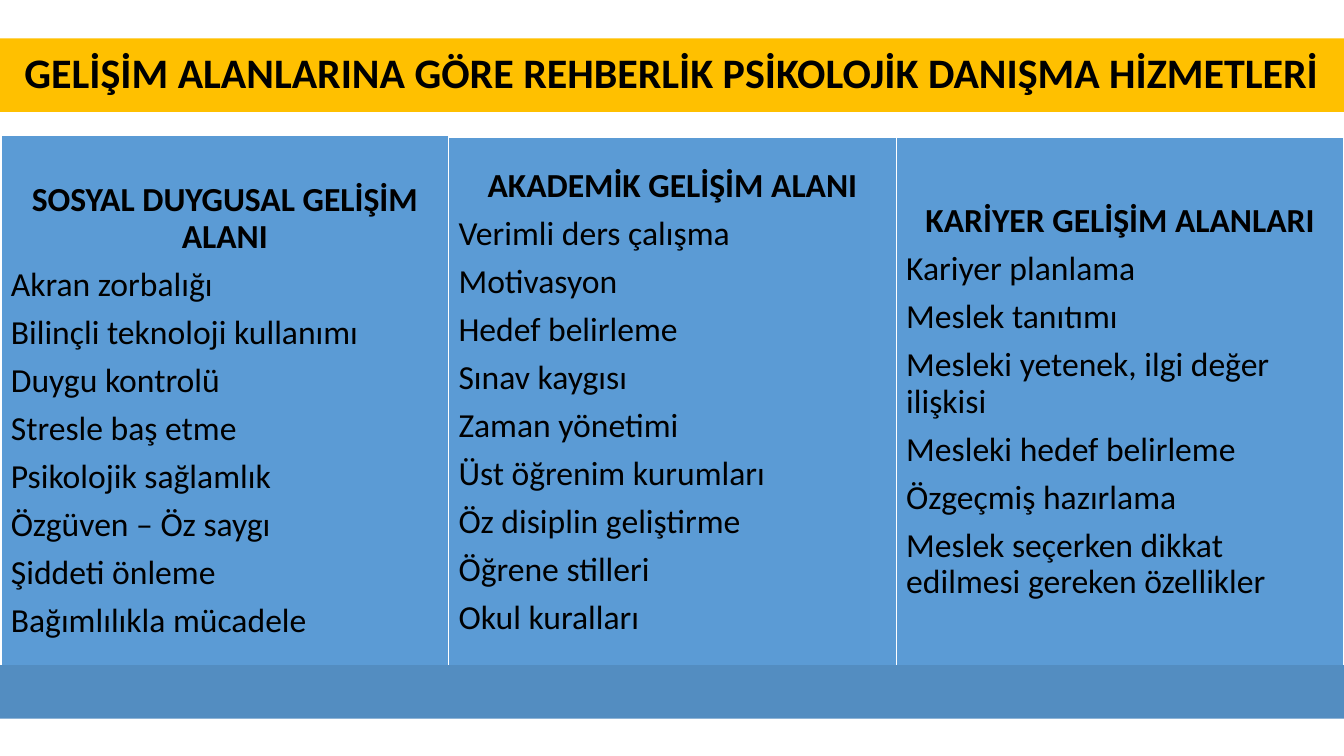
import dataclasses
import typing

import pptx
import pptx.dml.color
import pptx.enum.shapes
import pptx.enum.text
import pptx.util

# Grid: the slide is 1333 columns by 750 rows of square cells
COLS, ROWS = 1333, 750
CELL = pptx.util.Inches(0.01)
ALIGN = pptx.enum.text.PP_ALIGN


@dataclasses.dataclass
class Line:
    text: str
    size: int = 24
    bold: bool = False
    align: typing.Any = ALIGN.LEFT


@dataclasses.dataclass
class Box:
    left: int
    top: int
    width: int
    height: int
    fill: str
    edge: str = ""
    lines: typing.Sequence[Line] = ()
    pad: int = 10
    head: int = 0  # extra rows kept free above the text
    foot: int = 0  # extra rows kept free below the text


def color(code: str) -> pptx.dml.color.RGBColor:
    return pptx.dml.color.RGBColor.from_string(code)


def apply(target: typing.Any, values: dict) -> None:
    for name, value in values.items():
        setattr(target, name, value)


def write(frame: typing.Any, lines: typing.Sequence[Line]) -> None:
    for i, line in enumerate(lines):
        para = frame.add_paragraph() if i else frame.paragraphs[0]
        apply(para, {"alignment": line.align, "line_spacing": 0.9,
                     "space_after": pptx.util.Pt(0.35 * line.size)})
        run = para.add_run()
        run.text = line.text
        apply(run.font, {"name": "Calibri", "bold": line.bold,
                         "size": pptx.util.Pt(line.size)})
        run.font.color.rgb = color("000000")


def draw(slide: typing.Any, box: Box) -> None:
    spot = [n * CELL for n in (box.left, box.top, box.width, box.height)]
    shape = slide.shapes.add_shape(pptx.enum.shapes.MSO_SHAPE.RECTANGLE, *spot)
    shape.shadow.inherit = False
    shape.fill.solid()
    shape.fill.fore_color.rgb = color(box.fill)
    if box.edge:
        shape.line.color.rgb = color(box.edge)
        shape.line.width = pptx.util.Pt(1)
    else:
        shape.line.fill.background()
    side = box.pad * CELL
    apply(shape.text_frame, {
        "word_wrap": True,
        "vertical_anchor": pptx.enum.text.MSO_ANCHOR.MIDDLE,
        "margin_left": side, "margin_right": side,
        "margin_top": side + box.head * CELL,
        "margin_bottom": side + box.foot * CELL})
    write(shape.text_frame, box.lines)


def title(text: str, size: int = 24) -> Line:
    return Line(text, size, True, ALIGN.CENTER)


def column(i: int, top: int, height: int, name: str, items: list[str],
           head: int = 0, foot: int = 48) -> Box:
    wide = COLS // 3
    lines = [title(name), *map(Line, items)]
    return Box(1 + i * wide, top, wide, height, "5B9BD5", "FFFFFF", lines,
               head=head, foot=foot)


BOXES = [
    # Title bar
    Box(0, 38, COLS, 73, "FFC000", pad=12, lines=[title(
        "GELİŞİM ALANLARINA GÖRE REHBERLİK PSİKOLOJİK DANIŞMA HİZMETLERİ", 30)]),
    # Three areas
    column(0, 134, 578, "SOSYAL DUYGUSAL GELİŞİM ALANI", [
        "Akran zorbalığı", "Bilinçli teknoloji kullanımı", "Duygu kontrolü",
        "Stresle baş etme", "Psikolojik sağlamlık", "Özgüven – Öz saygı",
        "Şiddeti önleme", "Bağımlılıkla mücadele"], head=48, foot=78),
    column(1, 136, 575, "AKADEMİK GELİŞİM ALANI", [
        "Verimli ders çalışma", "Motivasyon", "Hedef belirleme",
        "Sınav kaygısı", "Zaman yönetimi", "Üst öğrenim kurumları",
        "Öz disiplin geliştirme", "Öğrene stilleri", "Okul kuralları"]),
    column(2, 136, 574, "KARİYER GELİŞİM ALANLARI", [
        "Kariyer planlama", "Meslek tanıtımı",
        "Mesleki yetenek, ilgi değer ilişkisi", "Mesleki hedef belirleme",
        "Özgeçmiş hazırlama",
        "Meslek seçerken dikkat edilmesi gereken özellikler"]),
    # Bottom band
    Box(0, 660, COLS, 53, "538DC1"),
]


def main() -> None:
    deck = pptx.Presentation()
    apply(deck, {"slide_width": COLS * CELL, "slide_height": ROWS * CELL})
    slide = deck.slides.add_slide(deck.slide_layouts[6])
    for box in BOXES:
        draw(slide, box)
    deck.save("out.pptx")


if __name__ == "__main__":
    main()
